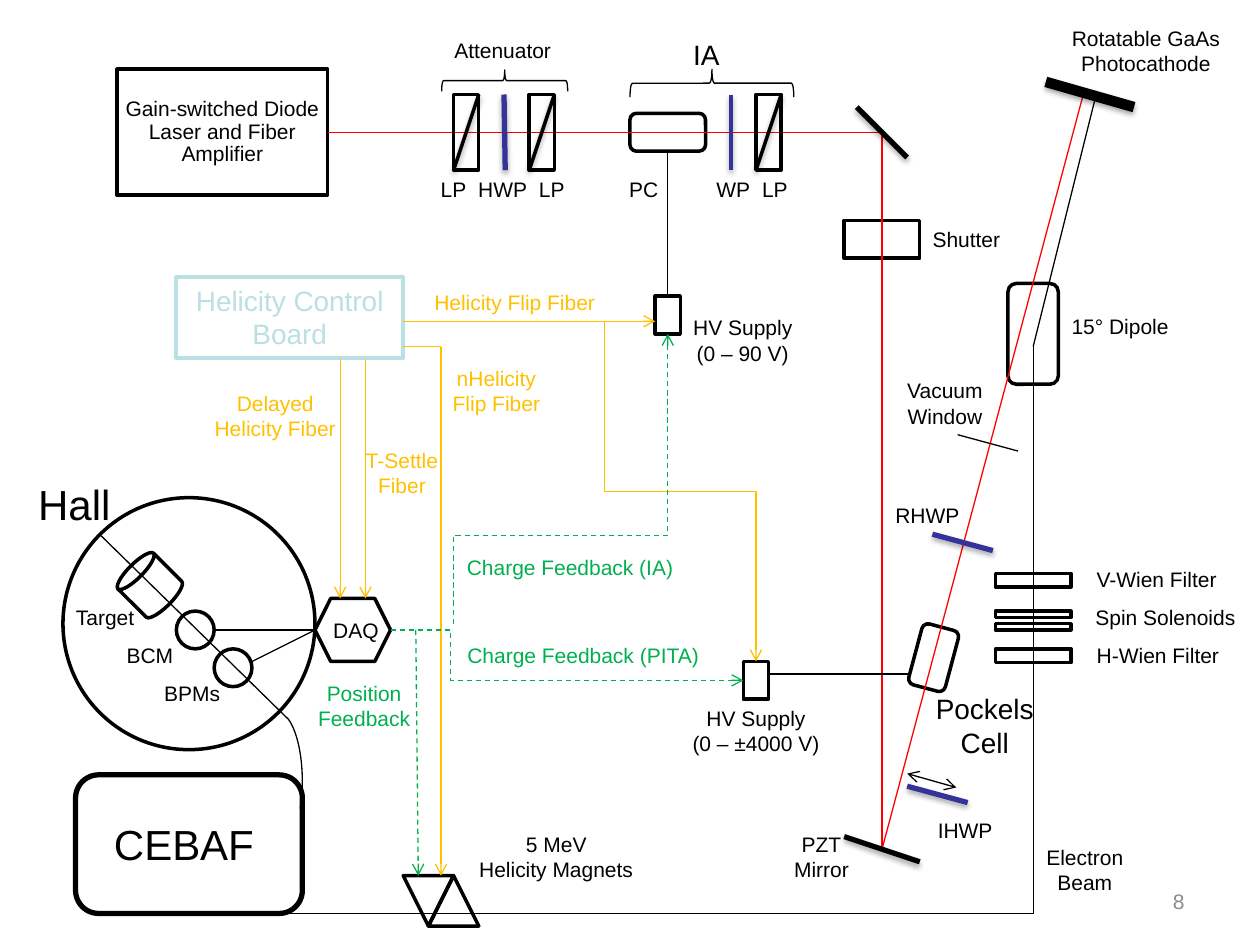
from lxml.etree import SubElement
from pptx import Presentation
from pptx.dml.color import RGBColor
from pptx.enum.dml import MSO_LINE
from pptx.enum.shapes import MSO_CONNECTOR as Link, MSO_SHAPE as Kind
from pptx.enum.text import MSO_ANCHOR as Anchor, PP_ALIGN as Align
from pptx.oxml.ns import qn
from pptx.util import Pt

PX = 9144  # 100 px to the inch
BLACK, RED, BLUE = "000000", "FF0000", "333399"
AMBER, GREEN, PALE, GREY = "FFC000", "00B050", "BBE0E3", "8C8C8C"

# name: kind, (left, top, width, height), rotation
PARTS = {
    "laser": (Kind.RECTANGLE, (93, 55, 167, 100), 0),
    "attenuator brace": (Kind.LEFT_BRACE, (392, 14, 17, 100), 90),
    "IA brace": (Kind.LEFT_BRACE, (554, 1, 22, 130), 90),
    "PC": (Kind.ROUNDED_RECTANGLE, (500, 90, 60, 30), 0),
    "shutter": (Kind.RECTANGLE, (670, 175, 60, 30), 0),
    "dipole": (Kind.ROUNDED_RECTANGLE, (800, 225, 40, 80), 0),
    "Pockels cell": (Kind.ROUNDED_RECTANGLE, (726, 497, 30, 50), 15),
    "IA supply": (Kind.RECTANGLE, (520, 235, 20, 30), 0),
    "PITA supply": (Kind.RECTANGLE, (590, 525, 20, 30), 0),
    "CEBAF": (Kind.ROUNDED_RECTANGLE, (60, 615, 180, 110), 0),
    "hall entry": (Kind.ARC, (200, 565, 40, 110), 0),
    "hall": (Kind.OVAL, (50, 395, 200, 200), 0),
    "target": (Kind.CAN, (99, 443, 40, 43), 315),
    "BCM": (Kind.OVAL, (140, 485, 30, 30), 0),
    "BPMs": (Kind.OVAL, (170, 515, 30, 30), 0),
    "DAQ": (Kind.HEXAGON, (250, 475, 60, 50), 0),
    "right magnet": (Kind.ISOSCELES_TRIANGLE, (340, 695, 40, 40), 0),
    "left magnet": (Kind.ISOSCELES_TRIANGLE, (320, 695, 40, 40), 180),
    "helicity board": (Kind.RECTANGLE, (140, 220, 180, 64), 0),
    "V-Wien": (Kind.RECTANGLE, (790, 455, 60, 11), 0),
    "upper solenoid": (Kind.RECTANGLE, (790, 485, 60, 5), 0),
    "lower solenoid": (Kind.RECTANGLE, (790, 495, 60, 5), 0),
    "H-Wien": (Kind.RECTANGLE, (790, 515, 60, 11), 0),
}
POLARIZER_LEFTS = (360, 420, 600)
OUTLINES = {"CEBAF": 3, "helicity board": 2.25, "attenuator brace": 0.75,
            "IA brace": 0.75, "hall entry": 0.75}
ADJUSTMENTS = {"hall entry": (167.4, 29.95), "target": (0.28,)}

# (from x, from y, to x, to y), colour
BEAMS = [
    ((700, 105, 700, 674), RED), ((700, 674, 860, 74), RED),
    ((820, 275, 870, 75), BLACK), ((820, 274, 820, 725), BLACK),
    ((760, 345, 808, 358), BLACK), ((220, 725, 820, 725), BLACK),
    ((610, 535, 721, 535), BLACK), ((228, 570, 79, 424), BLACK),
    ((200, 525, 250, 500), BLACK), ((170, 500, 250, 500), BLACK),
    ((320, 275, 350, 275), AMBER),
]
# (from x, from y, to x, to y), colour, width
OPTICS = [
    ((680, 85, 720, 125), BLACK, 3), ((670, 664, 730, 684), BLACK, 3),
    ((830, 65, 900, 85), BLACK, 6), ((720, 624, 768, 637), BLUE, 3),
    ((740, 424, 788, 437), BLUE, 3), ((400, 75, 401, 135), BLUE, 3),
    ((580, 75, 580, 135), BLUE, 2),
]
FIBERS = [(290, 285, 290, 475), (270, 285, 270, 475),
          (320, 255, 520, 255), (350, 275, 350, 695)]
# ends, colour, starts vertically, bend position, (target, side)
ELBOWS = [
    ((480, 255, 600, 525), AMBER, True, 0.5, ("PITA supply", 0)),
    ((310, 500, 590, 540), GREEN, False, 0.17, ("PITA supply", 1)),
    ((360, 495, 530, 265), GREEN, True, 0.305, ("IA supply", 2)),
]

# text, left, top, width
LABELS = {
    (12, BLACK): [
        ("Attenuator", 350, 25, 98), ("LP", 335, 135, 50), ("HWP", 364, 135, 70),
        ("LP", 413, 135, 50), ("PC", 486, 135, 50), ("WP", 552, 135, 60),
        ("LP", 590, 135, 50), ("Shutter", 730, 175, 74),
        ("Rotatable GaAs\nPhotocathode", 840, 15, 139),
        ("Vacuum\nWindow", 710, 295, 80), ("15° Dipole", 840, 244, 98),
        ("PZT\nMirror", 620, 655, 64), ("IHWP", 734, 644, 64),
        ("RHWP", 700, 394, 72), ("HV Supply\n(0 – ±4000 V)", 539, 555, 122),
        ("HV Supply\n(0 – 90 V)", 540, 245, 99), ("Electron\nBeam", 820, 665, 82),
        ("Target", 50, 475, 67), ("BCM", 90, 505, 58), ("BPMs", 120, 535, 65),
        ("5 MeV\nHelicity Magnets", 370, 655, 143), ("DAQ", 254, 485, 57),
        ("V-Wien Filter", 860, 445, 116), ("H-Wien Filter", 860, 505, 118),
        ("Spin Solenoids", 850, 475, 150),
    ],
    (12, AMBER): [
        ("Delayed\nHelicity Fiber", 160, 305, 117), ("T-Settle\nFiber", 280, 350, 78),
        ("Helicity Flip Fiber", 334, 225, 149), ("nHelicity\nFlip Fiber", 349, 285, 90),
    ],
    (12, GREEN): [
        ("Charge Feedback (PITA)", 360, 505, 206),
        ("Charge Feedback (IA)", 360, 435, 185), ("Position\nFeedback", 242, 535, 94),
    ],
    (16, BLACK): [("Pockels\nCell", 729, 544, 105), ("IA", 540, 25, 41)],
    (24, BLACK): [("CEBAF", 80, 645, 132), ("Hall", 20, 375, 78)],
}


def emu(lengths):
    return [round(length * PX) for length in lengths]


def rgb(color):
    return RGBColor.from_string(color)


def write(frame, text, size, color, align=Align.CENTER):
    frame.text = text
    for paragraph in frame.paragraphs:
        paragraph.alignment = align
        for run in paragraph.runs:
            run.font.size, run.font.name = Pt(size), "Arial"
            run.font.color.rgb = rgb(color)


def add_part(kind, box, rotation=0, color=BLACK, width=2):
    part = shapes.add_shape(kind, *emu(box))
    part.rotation = rotation
    part.shadow.inherit = False
    part.fill.background()
    part.line.color.rgb, part.line.width = rgb(color), Pt(width)
    return part


def add_label(text, left, top, width, size, color, align=Align.CENTER):
    height = round(size / 0.6) * (text.count("\n") + 1) + 10
    label = shapes.add_textbox(*emu((left, top, width, height)))
    label.text_frame.word_wrap = False
    write(label.text_frame, text, size, color, align)


def add_line(ends, color, width=0.75, link=Link.STRAIGHT, arrows=(), dashed=False,
             shadow=False):
    line = shapes.add_connector(link, *emu(ends))
    line.line.color.rgb, line.line.width = rgb(color), Pt(width)
    if dashed:
        line.line.dash_style = MSO_LINE.DASH
    properties = line._element.spPr
    for end in arrows:
        SubElement(properties.find(qn("a:ln")), qn(f"a:{end}"), type="arrow")
    effects = SubElement(properties, qn("a:effectLst"))
    if shadow:
        cast = SubElement(effects, qn("a:outerShdw"), blurRad="40000", dist="23000",
                          dir="5400000", rotWithShape="0")
        tint = SubElement(cast, qn("a:srgbClr"), val=BLACK)
        SubElement(tint, qn("a:alpha"), val="35000")
    return line


def add_elbow(ends, color, vertical, bend, target, side):
    elbow = add_line(ends, color, link=Link.ELBOW, arrows=["tailEnd"],
                     dashed=color == GREEN)
    elbow.end_connect(parts[target], side)
    properties = elbow._element.spPr
    guides = properties.find(qn("a:prstGeom")).get_or_add_avLst()
    SubElement(guides, qn("a:gd"), name="adj1", fmla=f"val {round(bend * 100000)}")
    if vertical:  # a turned frame makes the first leg run up or down
        x1, y1, x2, y2 = ends
        across, along = abs(x2 - x1), abs(y2 - y1)
        elbow.left, elbow.top, elbow.width, elbow.height = emu(
            ((x1 + x2 - along) / 2, (y1 + y2 - across) / 2, along, across))
        down = y2 > y1
        frame = properties.find(qn("a:xfrm"))
        frame.set("rot", str((90 if down else 270) * 60000))
        frame.set("flipH", "0")
        frame.set("flipV", "1" if down == (x2 > x1) else "0")


deck = Presentation()
deck.slide_width, deck.slide_height = emu((1000, 750))
shapes = deck.slides.add_slide(deck.slide_layouts[6]).shapes

parts = {}
for name, (kind, box, rotation) in PARTS.items():
    color = PALE if name == "helicity board" else BLACK
    parts[name] = add_part(kind, box, rotation, color, OUTLINES.get(name, 2))
    for index, value in enumerate(ADJUSTMENTS.get(name, ())):
        parts[name].adjustments[index] = value

laser_text = parts["laser"].text_frame
laser_text.margin_left = laser_text.margin_right = 5 * PX
laser_text.vertical_anchor = Anchor.MIDDLE
write(laser_text, "Gain-switched Diode Laser and Fiber Amplifier", 12, BLACK)
laser_text.paragraphs[0].line_spacing = 0.9
board_text = parts["helicity board"].text_frame
board_text.vertical_anchor = Anchor.TOP
write(board_text, "Helicity Control Board", 16, PALE)

add_line((260, 105, 700, 105), RED).begin_connect(parts["laser"], 3)
supply_wire = add_line((530, 120, 530, 235), BLACK)
supply_wire.begin_connect(parts["PC"], 2)
supply_wire.end_connect(parts["IA supply"], 0)
for ends, color in BEAMS:
    add_line(ends, color)
for left in POLARIZER_LEFTS:
    add_part(Kind.RECTANGLE, (left, 75, 20, 60))
    add_line((left + 20, 75, left, 135), BLACK, 2, shadow=True)
for ends, color, width in OPTICS:
    add_line(ends, color, width, shadow=True)
for ends in FIBERS:
    add_line(ends, AMBER, arrows=["tailEnd"])
for ends, color, vertical, bend, goal in ELBOWS:
    add_elbow(ends, color, vertical, bend, *goal)
add_line((330, 500, 332, 695), GREEN, arrows=["tailEnd"], dashed=True)
add_line((720, 614, 759, 625), BLACK, arrows=["headEnd", "tailEnd"])

for (size, color), labels in LABELS.items():
    for label in labels:
        add_label(*label, size, color)
add_label("8", 717, 700, 233, 12, GREY, Align.RIGHT)

deck.save("out.pptx")
